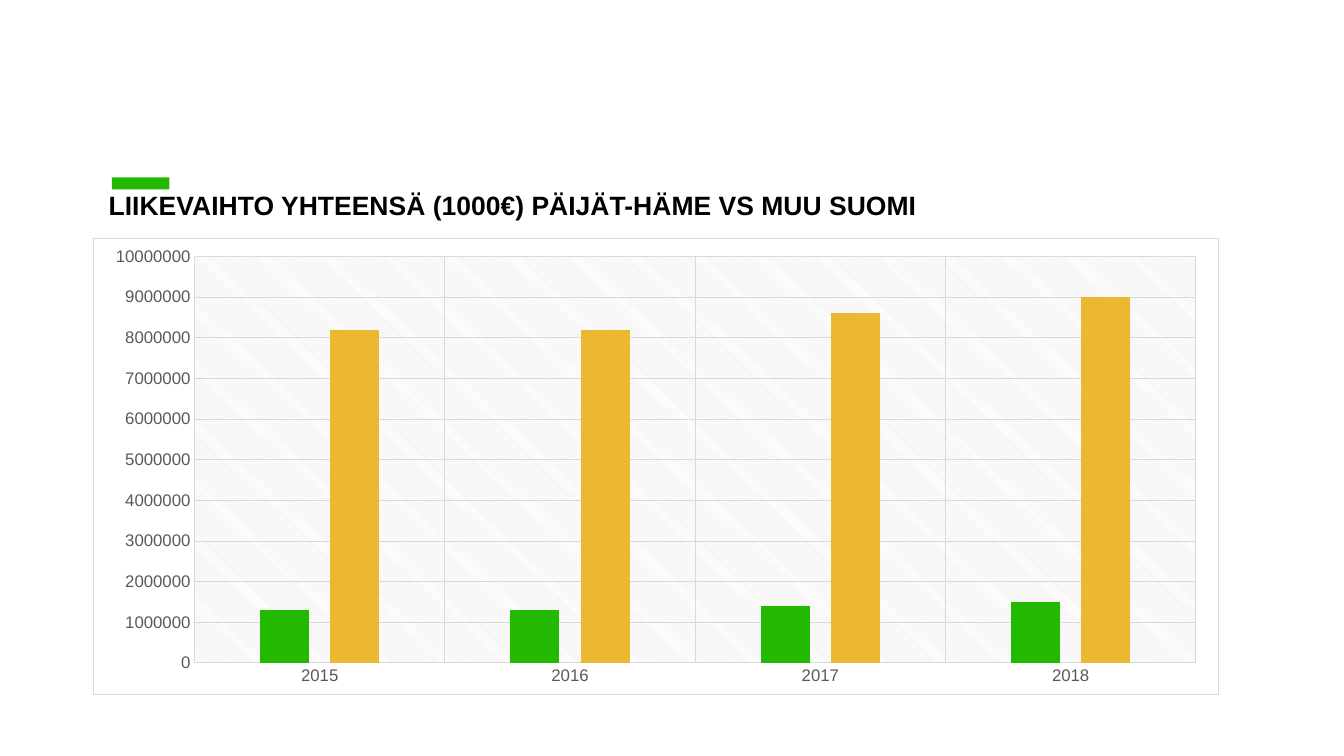
from lxml import etree
from pptx import Presentation
from pptx.chart.data import CategoryChartData
from pptx.dml.color import RGBColor
from pptx.enum.chart import XL_CHART_TYPE as ChartType, XL_TICK_MARK as TickMark
from pptx.enum.shapes import MSO_SHAPE as Shape
from pptx.enum.text import MSO_ANCHOR as Anchor
from pptx.oxml import parse_xml
from pptx.oxml.ns import nsdecls, qn
from pptx.util import Inches, Pt

TITLE = "LIIKEVAIHTO YHTEENSÄ (1000€) PÄIJÄT-HÄME VS MUU SUOMI"
YEARS = ["2015", "2016", "2017", "2018"]
GREEN = RGBColor(0x23, 0xB9, 0x00)
YELLOW = RGBColor(0xED, 0xB8, 0x31)
BLACK = RGBColor(0, 0, 0)
LABEL_GRAY = RGBColor(0x59, 0x59, 0x59)
LINE_GRAY = RGBColor(0xD9, 0xD9, 0xD9)
WHITE = RGBColor(0xFF, 0xFF, 0xFF)
REVENUE = [
    ("Series 1", GREEN, [1300000, 1300000, 1400000, 1500000]),
    ("Series 2", YELLOW, [8200000, 8200000, 8600000, 9000000]),
]
PLOT_LAYOUT = {"x": 0.09, "y": 0.04, "w": 0.89, "h": 0.89}
FONT = "Arial"


def add_accent(slide):
    accent = slide.shapes.add_shape(
        Shape.RECTANGLE, Inches(1.11), Inches(1.76), Inches(0.57), Inches(0.12))
    accent.shadow.inherit = False
    accent.fill.solid()
    accent.fill.fore_color.rgb = GREEN
    accent.line.fill.background()


def add_title(slide):
    frame = slide.shapes.add_textbox(
        Inches(0.98), Inches(1.8), Inches(11.5), Inches(0.51)).text_frame
    frame.word_wrap = True
    frame.vertical_anchor = Anchor.MIDDLE
    title = frame.paragraphs[0]
    title.text = TITLE
    title.line_spacing = 0.9
    title.font.name = FONT
    title.font.size = Pt(18.9)
    title.font.bold = True
    title.font.color.rgb = BLACK


def style_axis(axis):
    axis.major_tick_mark = axis.minor_tick_mark = TickMark.NONE
    axis.has_major_gridlines = True
    gridlines = axis.major_gridlines.format.line
    gridlines.color.rgb = LINE_GRAY
    gridlines.width = Pt(0.75)
    labels = axis.tick_labels.font
    labels.name = FONT
    labels.size = Pt(12)
    labels.color.rgb = LABEL_GRAY


def style_areas(chart):
    """Set the chart frame, the hatched plot background and the plot position."""
    chart_element = chart.element.find(qn("c:chart"))
    chart_element.addnext(parse_xml(
        f'<c:spPr {nsdecls("c", "a")}>'
        f'<a:solidFill><a:srgbClr val="{WHITE}"/></a:solidFill>'
        f'<a:ln w="{Pt(0.75)}"><a:solidFill><a:srgbClr val="{LINE_GRAY}"/>'
        '</a:solidFill></a:ln></c:spPr>'))
    plot_area = chart_element.find(qn("c:plotArea"))
    plot_area.append(parse_xml(
        f'<c:spPr {nsdecls("c", "a")}><a:pattFill prst="ltDnDiag">'
        f'<a:fgClr><a:srgbClr val="{LINE_GRAY}"/></a:fgClr>'
        f'<a:bgClr><a:srgbClr val="{WHITE}"/></a:bgClr>'
        '</a:pattFill><a:ln><a:noFill/></a:ln></c:spPr>'))
    for layout in plot_area.findall(qn("c:layout")):
        plot_area.remove(layout)
    layout = etree.Element(qn("c:layout"))
    manual = etree.SubElement(layout, qn("c:manualLayout"))
    settings = {"layoutTarget": "inner", "xMode": "edge", "yMode": "edge", **PLOT_LAYOUT}
    for tag, value in settings.items():
        etree.SubElement(manual, qn(f"c:{tag}")).set("val", str(value))
    plot_area.insert(0, layout)


def add_revenue_chart(slide):
    revenue = CategoryChartData()
    revenue.categories = YEARS
    for name, _, values in REVENUE:
        revenue.add_series(name, values)
    chart = slide.shapes.add_chart(
        ChartType.COLUMN_CLUSTERED, Inches(0.92), Inches(2.36),
        Inches(11.17), Inches(4.54), revenue).chart
    chart.has_title = False
    chart.has_legend = False
    chart.font.name = FONT
    chart.font.size = Pt(10)

    columns = chart.plots[0]
    columns.vary_by_categories = False
    columns.gap_width = 267
    columns.overlap = -43
    for series, (_, color, _) in zip(columns.series, REVENUE):
        series.format.fill.solid()
        series.format.fill.fore_color.rgb = color

    style_axis(chart.category_axis)
    style_axis(chart.value_axis)
    chart.category_axis.format.line.color.rgb = LINE_GRAY
    chart.category_axis.format.line.width = Pt(0.75)
    value_axis = chart.value_axis
    value_axis.format.line.fill.background()
    value_axis.minimum_scale = 0
    value_axis.maximum_scale = 10000000
    value_axis.major_unit = 1000000
    style_areas(chart)


def main():
    deck = Presentation()
    deck.slide_width = Inches(13.33)
    deck.slide_height = Inches(7.5)
    slide = deck.slides.add_slide(deck.slide_layouts[6])
    add_accent(slide)
    add_title(slide)
    add_revenue_chart(slide)
    deck.save("out.pptx")


if __name__ == "__main__":
    main()
